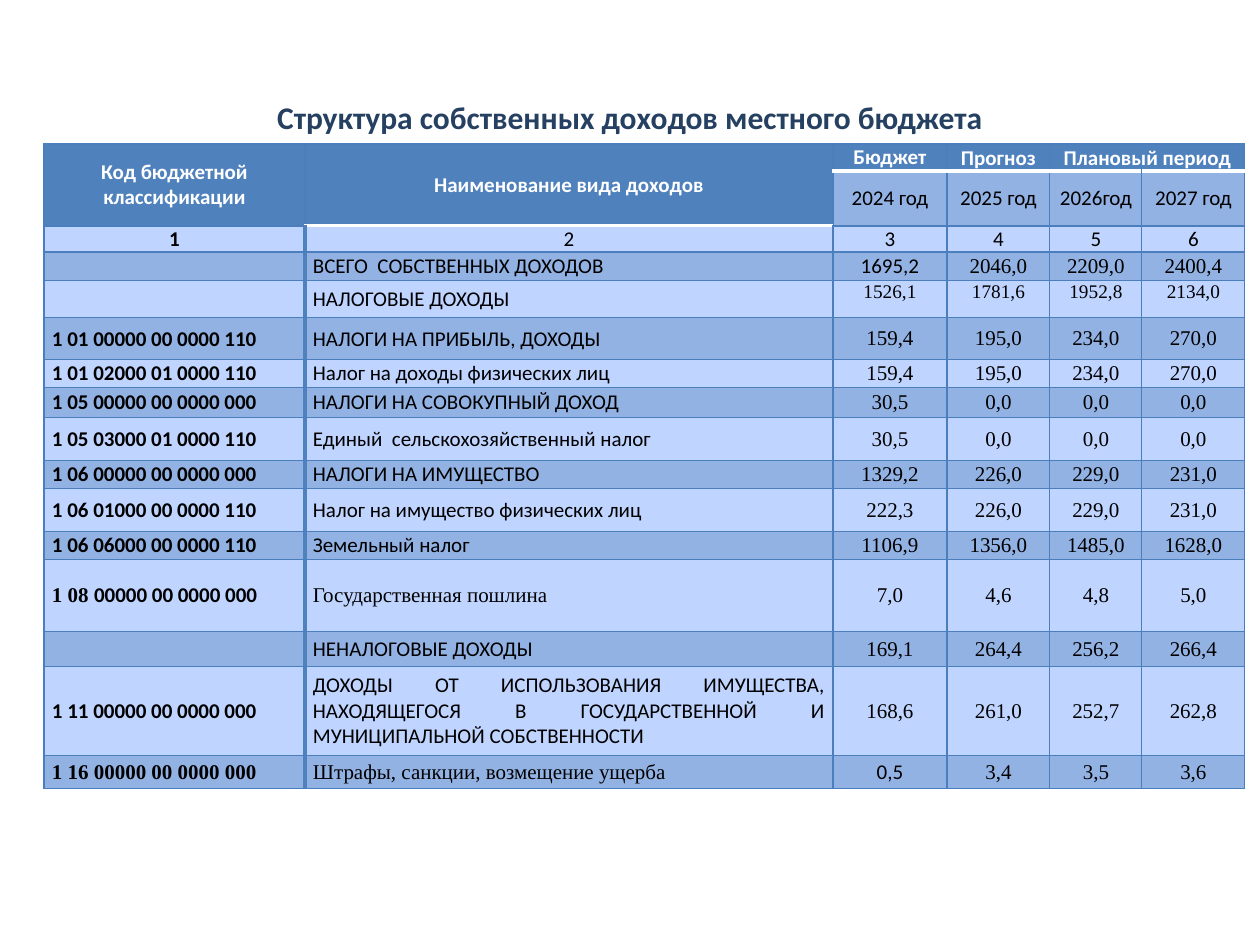
from dataclasses import dataclass

from lxml.etree import SubElement
from pptx import Presentation
from pptx.dml.color import RGBColor
from pptx.enum.text import MSO_VERTICAL_ANCHOR as Anchor, PP_PARAGRAPH_ALIGNMENT as Align
from pptx.oxml.ns import qn
from pptx.util import Emu, Pt

PX = 914400 / 126

WHITE = RGBColor(0xFF, 0xFF, 0xFF)
BLACK = RGBColor(0x00, 0x00, 0x00)
NAVY = RGBColor(0x25, 0x40, 0x61)
HEADER_BLUE = RGBColor(0x4F, 0x81, 0xBD)
BAND_BLUE = RGBColor(0x93, 0xB2, 0xE4)
LIGHT_BLUE = RGBColor(0xBF, 0xD4, 0xFF)
GRID_BLUE = RGBColor(0x4B, 0x7E, 0xBC)

SANS, SERIF = "Calibri", "Times New Roman"

COLUMN_WIDTHS = [261, 528, 114, 103, 92, 103]
HEADER_HEIGHTS = [27, 55, 26]
TABLE_LEFT, TABLE_TOP = 44, 144


@dataclass
class Run:
    text: str
    font: str = SANS
    bold: bool = False
    size: int = 12
    color: RGBColor = BLACK


@dataclass
class Income:
    height: int
    code: str
    name: str
    values: str
    code_fonts: tuple = (SANS,)
    name_font: str = SANS
    first_value_font: str = SERIF
    value_size: int = 12
    value_anchor: Anchor = Anchor.MIDDLE


INCOMES = [
    Income(29, "", "ВСЕГО  СОБСТВЕННЫХ ДОХОДОВ", "1695,2 2046,0 2209,0 2400,4",
           first_value_font=SANS),
    Income(37, "", "НАЛОГОВЫЕ ДОХОДЫ", "1526,1 1781,6 1952,8 2134,0",
           value_size=11, value_anchor=Anchor.TOP),
    Income(42, "1 01 00000 00 0000 110", "НАЛОГИ НА ПРИБЫЛЬ, ДОХОДЫ", "159,4 195,0 234,0 270,0"),
    Income(28, "1 01 02000 01 0000 110", "Налог на доходы физических лиц",
           "159,4 195,0 234,0 270,0"),
    Income(30, "1 05 00000 00 0000 000", "НАЛОГИ НА СОВОКУПНЫЙ ДОХОД", "30,5 0,0 0,0 0,0"),
    Income(43, "1 05 03000 01 0000 110", "Единый  сельскохозяйственный налог",
           "30,5 0,0 0,0 0,0"),
    Income(28, "1 06 00000 00 0000 000", "НАЛОГИ НА ИМУЩЕСТВО", "1329,2 226,0 229,0 231,0"),
    Income(43, "1 06 01000 00 0000 110", "Налог на имущество физических лиц",
           "222,3 226,0 229,0 231,0"),
    Income(28, "1 06 06000 00 0000 110", "Земельный налог", "1106,9 1356,0 1485,0 1628,0"),
    Income(72, "1 08 |00000 00 0000 000", "Государственная пошлина", "7,0 4,6 4,8 5,0",
           code_fonts=(SERIF, SANS), name_font=SERIF),
    Income(35, "", "НЕНАЛОГОВЫЕ ДОХОДЫ", "169,1 264,4 256,2 266,4"),
    Income(89, "1 11 00000 00 0000 000",
           "ДОХОДЫ ОТ ИСПОЛЬЗОВАНИЯ ИМУЩЕСТВА, НАХОДЯЩЕГОСЯ В ГОСУДАРСТВЕННОЙ И "
           "МУНИЦИПАЛЬНОЙ СОБСТВЕННОСТИ", "168,6 261,0 252,7 262,8"),
    Income(33, "1 16 00000 00 0000 000", "Штрафы, санкции, возмещение ущерба",
           "0,5 3,4 3,5 3,6", code_fonts=(SERIF,), name_font=SERIF, first_value_font=SANS),
]


def px(length: int) -> Emu:
    return Emu(round(length * PX))


def apply(target, formats: dict) -> None:
    for name, value in formats.items():
        setattr(target, name, value)


def write(paragraph, runs: list[Run], align: Align) -> None:
    paragraph.alignment = align
    for item in runs:
        run = paragraph.add_run()
        run.text = item.text
        apply(run.font, {"name": item.font, "size": Pt(item.size), "bold": item.bold})
        run.font.color.rgb = item.color


def write_cell(cell, runs: list[Run], align=Align.CENTER, anchor=Anchor.MIDDLE, side=8) -> None:
    apply(cell, {"margin_left": px(side), "margin_right": px(side), "vertical_anchor": anchor})
    write(cell.text_frame.paragraphs[0], runs, align)


def edge_below(row: int, column: int) -> tuple:
    if (row == 0 and column >= 2) or (row == 1 and column == 1):
        return WHITE, 2
    return GRID_BLUE, 0.75


def edge_right(row: int, column: int) -> tuple:
    return (HEADER_BLUE, 2) if column == 0 and row >= 2 else (GRID_BLUE, 0.75)


def format_cell(cell, row: int, column: int) -> None:
    """Set borders, fill and the height of an empty line."""
    bottom_row = 1 if row == 0 and column < 2 else row
    edges = {
        "a:lnL": edge_right(row, column - 1),
        "a:lnR": edge_right(row, column),
        "a:lnT": edge_below(row - 1, column),
        "a:lnB": edge_below(bottom_row, column),
    }
    properties = cell._tc.get_or_add_tcPr()
    for tag, (color, width) in edges.items():
        line = SubElement(properties, qn(tag), w=str(int(Pt(width))))
        SubElement(SubElement(line, qn("a:solidFill")), qn("a:srgbClr"), val=str(color))

    if row == 0 or (row == 1 and column < 2):
        color = HEADER_BLUE
    else:
        color = BAND_BLUE if row % 2 else LIGHT_BLUE
    cell.fill.solid()
    cell.fill.fore_color.rgb = color

    apply(cell, {"margin_top": 0, "margin_bottom": 0})
    paragraph = cell.text_frame.paragraphs[0]
    if not paragraph.runs:
        SubElement(paragraph._p, qn("a:endParaRPr"), sz="1200")


def write_header(table) -> None:
    for origin, end in [((0, 0), (1, 0)), ((0, 1), (1, 1)), ((0, 4), (0, 5))]:
        table.cell(*origin).merge(table.cell(*end))
    titles = ["Код бюджетной классификации", "Наименование вида доходов",
              "Бюджет", "Прогноз", "Плановый период"]
    for column, title in enumerate(titles):
        anchor = Anchor.BOTTOM if column > 2 else Anchor.MIDDLE
        write_cell(table.cell(0, column), [Run(title, bold=True, color=WHITE)], anchor=anchor)
    for column, year in enumerate(["2024 год", "2025 год", "2026год", "2027 год"], start=2):
        write_cell(table.cell(1, column), [Run(year)])
    for column in range(len(COLUMN_WIDTHS)):
        write_cell(table.cell(2, column), [Run(str(column + 1), bold=column == 0)],
                   anchor=Anchor.BOTTOM)


def write_income(table, row: int, income: Income) -> None:
    if income.code:
        parts = zip(income.code.split("|"), income.code_fonts)
        write_cell(table.cell(row, 0), [Run(text, font, bold=True) for text, font in parts],
                   Align.JUSTIFY)
    write_cell(table.cell(row, 1), [Run(income.name, income.name_font)], Align.JUSTIFY)
    for index, value in enumerate(income.values.split()):
        font = SERIF if index else income.first_value_font
        write_cell(table.cell(row, index + 2), [Run(value, font, size=income.value_size)],
                   anchor=income.value_anchor, side=1)


def add_title(slide) -> None:
    box = slide.shapes.add_textbox(px(63), px(38), px(1134), px(157))
    apply(box.text_frame, {"word_wrap": True, "vertical_anchor": Anchor.MIDDLE})
    write(box.text_frame.paragraphs[0],
          [Run("Структура собственных доходов местного бюджета", bold=True, size=18, color=NAVY)],
          Align.CENTER)


def add_income_table(slide) -> None:
    heights = HEADER_HEIGHTS + [income.height for income in INCOMES]
    table = slide.shapes.add_table(
        len(heights), len(COLUMN_WIDTHS), px(TABLE_LEFT), px(TABLE_TOP),
        px(sum(COLUMN_WIDTHS)), px(sum(heights))).table
    apply(table, {"first_row": False, "horz_banding": False})
    for column, width in zip(table.columns, COLUMN_WIDTHS):
        column.width = px(width)
    for row, height in zip(table.rows, heights):
        row.height = px(height)

    write_header(table)
    for row, income in enumerate(INCOMES, start=len(HEADER_HEIGHTS)):
        write_income(table, row, income)
    for row in range(len(heights)):
        for column in range(len(COLUMN_WIDTHS)):
            format_cell(table.cell(row, column), row, column)


def main() -> None:
    presentation = Presentation()
    apply(presentation, {"slide_width": px(1260), "slide_height": px(945)})
    slide = presentation.slides.add_slide(presentation.slide_layouts[6])
    add_title(slide)
    add_income_table(slide)
    presentation.save("out.pptx")


if __name__ == "__main__":
    main()
